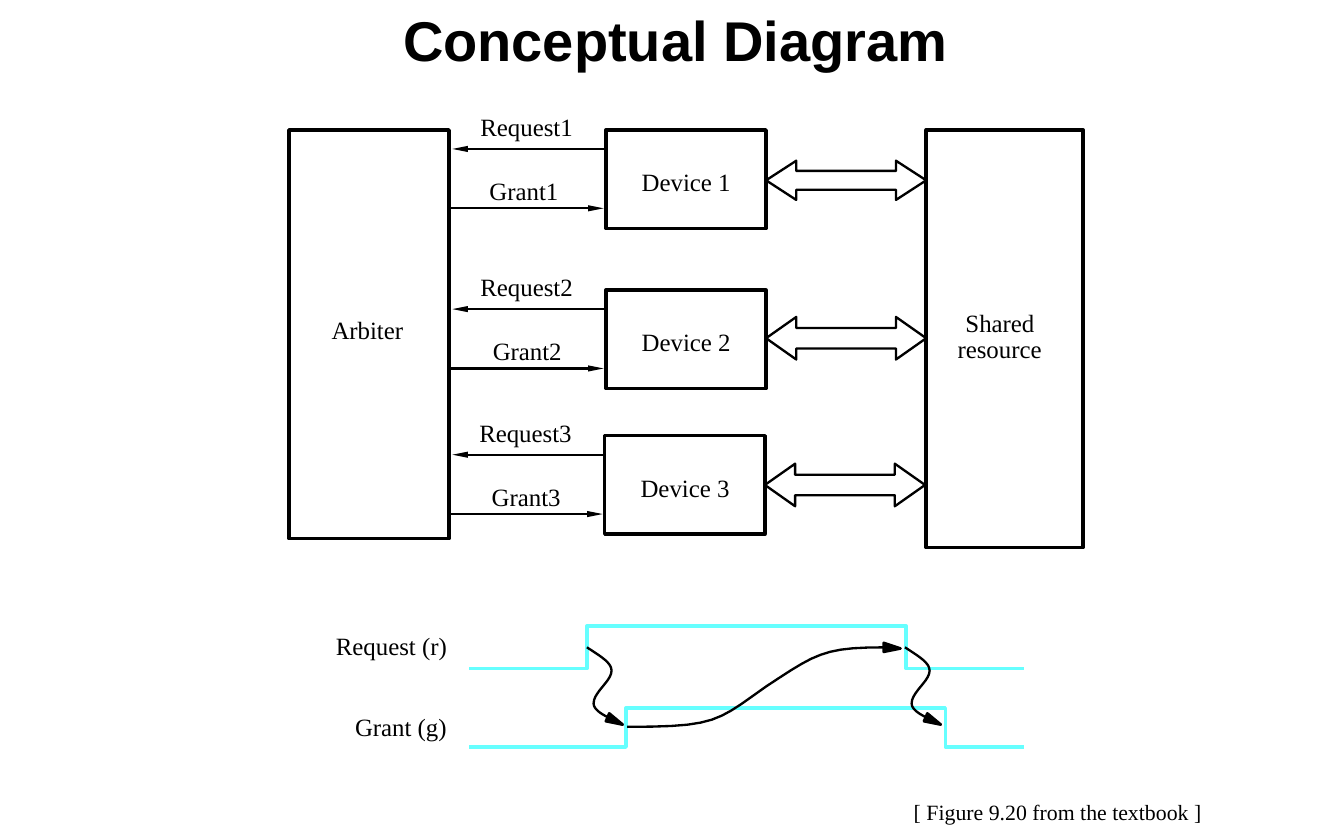
from dataclasses import dataclass

from lxml.etree import SubElement
from pptx import Presentation
from pptx.dml.color import RGBColor
from pptx.enum.shapes import MSO_CONNECTOR as Connector, MSO_SHAPE as Shape
from pptx.enum.text import MSO_ANCHOR as Anchor, MSO_AUTO_SIZE as AutoSize, PP_ALIGN as Align
from pptx.oxml.ns import qn
from pptx.util import Inches, Pt

COLUMNS, ROWS = 12, 7.5
WIDTH, HEIGHT = Inches(COLUMNS), Inches(ROWS)


@dataclass(frozen=True)
class Theme:
    """Colours, fonts, type sizes and line widths of the slide."""

    ink: RGBColor = RGBColor(0x00, 0x00, 0x00)
    signal: RGBColor = RGBColor(0x66, 0xFF, 0xFF)
    heading_font: str = "Arial"
    label_font: str = "Times New Roman"
    heading: int = 36
    label: int = 16
    credit: int = 14
    thick: float = 2.25
    medium: float = 1.75
    thin: float = 1.5


@dataclass(frozen=True)
class DeviceRow:
    """Place of one device and its request, grant and bus arrows."""

    number: int
    top: float
    left: float
    grant_left: float
    bus_middle: float
    bus_height: float


THEME = Theme()
DEVICE_WIDTH, DEVICE_HEIGHT = 1.43, 0.88
ARBITER_RIGHT = 4.01
DEVICES = (
    DeviceRow(1, 1.16, 5.41, 4.37, 1.61, 0.35),
    DeviceRow(2, 2.59, 5.41, 4.4, 3.02, 0.38),
    DeviceRow(3, 3.89, 5.4, 4.39, 4.33, 0.38),
)
HANDSHAKE = (
    (0, 0), (0.14, 0.09), (0.22, 0.14), (0.22, 0.21), (0.22, 0.3),
    (0.06, 0.4), (0.06, 0.5), (0.06, 0.54), (0.1, 0.58), (0.18, 0.62),
)
HANDSHAKE_HEAD = ((0.17, 0.66), (0.32, 0.69), (0.2, 0.59))
RELEASE = (
    (5.6, 6.49), (6.4, 6.49), (6.4, 6.44), (6.84, 6.13),
    (7.28, 5.84), (7.35, 5.78), (7.89, 5.78),
)
RELEASE_HEAD = ((7.89, 5.82), (8.04, 5.79), (7.89, 5.74))


def x(column):
    """Return the distance of a grid column from the left."""
    return round(WIDTH * column / COLUMNS)


def y(row):
    """Return the distance of a grid row from the top."""
    return round(HEIGHT * row / ROWS)


def format_line(shape, color=THEME.ink, width=THEME.thin):
    """Set the colour and width of an outline."""
    shape.line.color.rgb = color
    shape.line.width = Pt(width)


def write(frame, text, size=THEME.label, font=THEME.label_font, bold=False, align=Align.LEFT):
    """Write one formatted paragraph into a text frame."""
    para = frame.paragraphs[0]
    para.alignment = align
    span = para.add_run()
    span.text = text
    span.font.size = Pt(size)
    span.font.name = font
    span.font.bold = bold
    span.font.color.rgb = THEME.ink


def add_title(page, text):
    """Fill and place the title placeholder."""
    title = page.shapes.title
    title.left, title.top, title.width, title.height = x(1.03), y(0), x(10), y(0.75)
    frame = title.text_frame
    frame.auto_size = AutoSize.NONE
    frame.vertical_anchor = Anchor.TOP
    write(frame, text, size=THEME.heading, font=THEME.heading_font, bold=True, align=Align.CENTER)


def add_label(page, text, left, top, width, height=0.27, inset=(0, 0), **style):
    """Add an unwrapped text label."""
    frame = page.shapes.add_textbox(x(left), y(top), x(width), y(height)).text_frame
    frame.word_wrap = False
    frame.auto_size = AutoSize.SHAPE_TO_FIT_TEXT
    frame.margin_left = frame.margin_right = x(inset[0])
    frame.margin_top = frame.margin_bottom = y(inset[1])
    write(frame, text, **style)


def add_outline(page, kind, left, top, width, height, line=THEME.thick):
    """Add an unfilled preset shape."""
    shape = page.shapes.add_shape(kind, x(left), y(top), x(width), y(height))
    shape.shadow.inherit = False
    shape.fill.background()
    format_line(shape, width=line)
    return shape


def add_bus(page, left, middle, height):
    """Add a double arrow between a device and the resource."""
    bus = add_outline(page, Shape.LEFT_RIGHT_ARROW, left, middle - height / 2,
                      DEVICE_WIDTH, height, line=THEME.thin)
    bus.adjustments[0] = 0.48
    bus.adjustments[1] = 0.27 / height


def add_arrow(page, start, end, row):
    """Add a horizontal line with a slim arrowhead."""
    arrow = page.shapes.add_connector(Connector.STRAIGHT, x(start), y(row), x(end), y(row))
    format_line(arrow)
    SubElement(arrow.line._get_or_add_ln(), qn("a:tailEnd"), type="triangle", w="sm", len="lg")
    SubElement(arrow._element.spPr, qn("a:effectLst"))


def add_path(page, points, closed=False, color=THEME.ink, width=THEME.thin):
    """Add an open line or a filled closed outline."""
    corners = [(x(column), y(row)) for column, row in points]
    builder = page.shapes.build_freeform(*corners[0])
    builder.add_line_segments(corners[1:], close=closed)
    path = builder.convert_to_shape()
    path.shadow.inherit = False
    if closed:
        path.fill.solid()
        path.fill.fore_color.rgb = color
    else:
        path.fill.background()
    format_line(path, color, width)


def bezier(controls, steps=10):
    """Return points along a chain of cubic curves."""
    points = [controls[0]]
    for first in range(0, len(controls) - 1, 3):
        chain = controls[first:first + 4]
        for step in range(1, steps + 1):
            t = step / steps
            weights = ((1 - t) ** 3, 3 * t * (1 - t) ** 2, 3 * t * t * (1 - t), t ** 3)
            points.append(tuple(sum(w * p[axis] for w, p in zip(weights, chain))
                                for axis in (0, 1)))
    return points


def add_curved_arrow(page, controls, head, origin=(0, 0)):
    """Add a curve and its arrowhead, moved to an origin."""
    def move(points):
        return [(column + origin[0], row + origin[1]) for column, row in points]
    add_path(page, move(bezier(controls)))
    add_path(page, move(head), closed=True, width=THEME.medium)


def add_pulse(page, rise, fall, high, low):
    """Add a signal that rises and falls once."""
    points = ((4.19, low), (rise, low), (rise, high), (fall, high), (fall, low), (9.14, low))
    add_path(page, points, color=THEME.signal, width=THEME.thick)


def add_device(page, row):
    """Add a device with its labels and arrows."""
    top, left = row.top, row.left
    add_outline(page, Shape.RECTANGLE, left, top, DEVICE_WIDTH, DEVICE_HEIGHT)
    add_label(page, f"Device {row.number}", left + 0.32, top + 0.33, 0.8)
    add_label(page, f"Request{row.number}", left - 1.12, top - 0.16, 0.84)
    add_label(page, f"Grant{row.number}", row.grant_left, top + 0.41, 0.62)
    add_arrow(page, left, ARBITER_RIGHT + 0.03, top + 0.17)
    add_arrow(page, ARBITER_RIGHT, left - 0.02, top + 0.7)
    add_bus(page, left + DEVICE_WIDTH, row.bus_middle, row.bus_height)


def add_timing(page):
    """Add the request and grant signals with their dependencies."""
    add_pulse(page, 5.24, 8.09, 5.59, 5.97)
    add_pulse(page, 5.59, 8.44, 6.32, 6.67)
    add_curved_arrow(page, RELEASE, RELEASE_HEAD)
    for column in (5.24, 8.08):
        add_curved_arrow(page, HANDSHAKE, HANDSHAKE_HEAD, origin=(column, 5.78))
    add_label(page, "Request (r)", 3, 5.63, 1.06)
    add_label(page, "Grant (g)", 3.17, 6.35, 0.89)


def main():
    """Build and save the slide."""
    deck = Presentation()
    deck.slide_width, deck.slide_height = WIDTH, HEIGHT
    page = deck.slides.add_slide(deck.slide_layouts[5])
    add_title(page, "Conceptual Diagram")
    add_outline(page, Shape.RECTANGLE, 2.58, 1.16, 1.43, 3.65)
    add_label(page, "Arbiter", 2.96, 2.81, 0.71)
    add_outline(page, Shape.RECTANGLE, 8.27, 1.16, 1.4, 3.73)
    add_label(page, "Shared", 8.62, 2.75, 0.62)
    add_label(page, "resource", 8.55, 2.98, 0.76)
    for row in DEVICES:
        add_device(page, row)
    add_timing(page)
    add_label(page, "[ Figure 9.20 from the textbook ]", 8.06, 7.08, 2.79, 0.34,
              inset=(0.1, 0.05), size=THEME.credit)
    deck.save("out.pptx")


if __name__ == "__main__":
    main()
